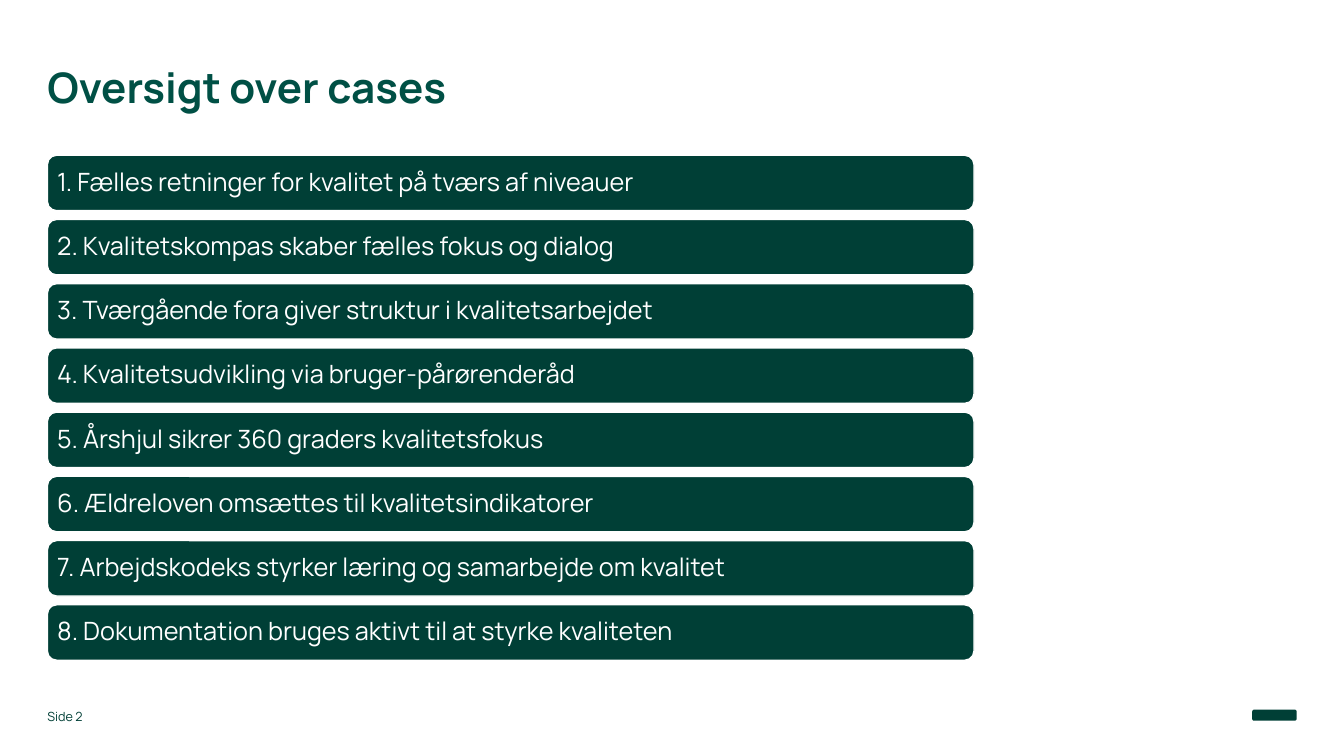
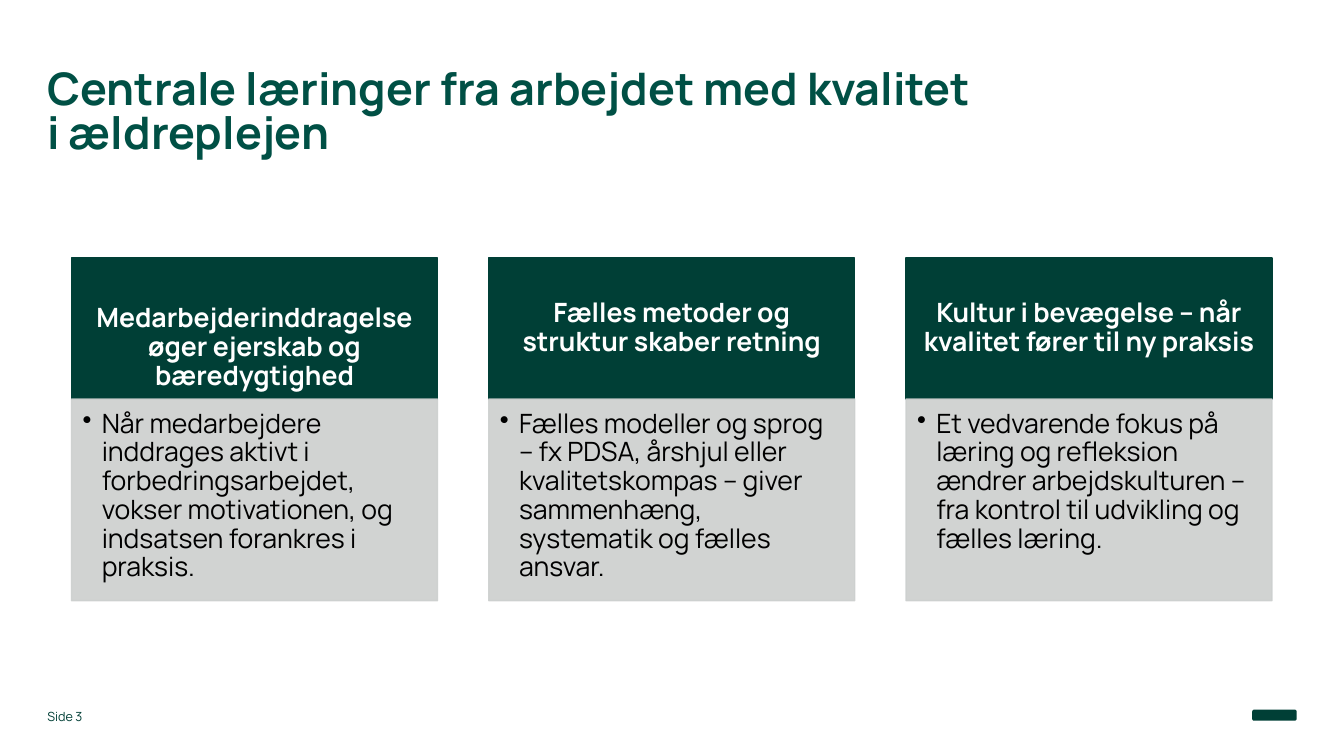
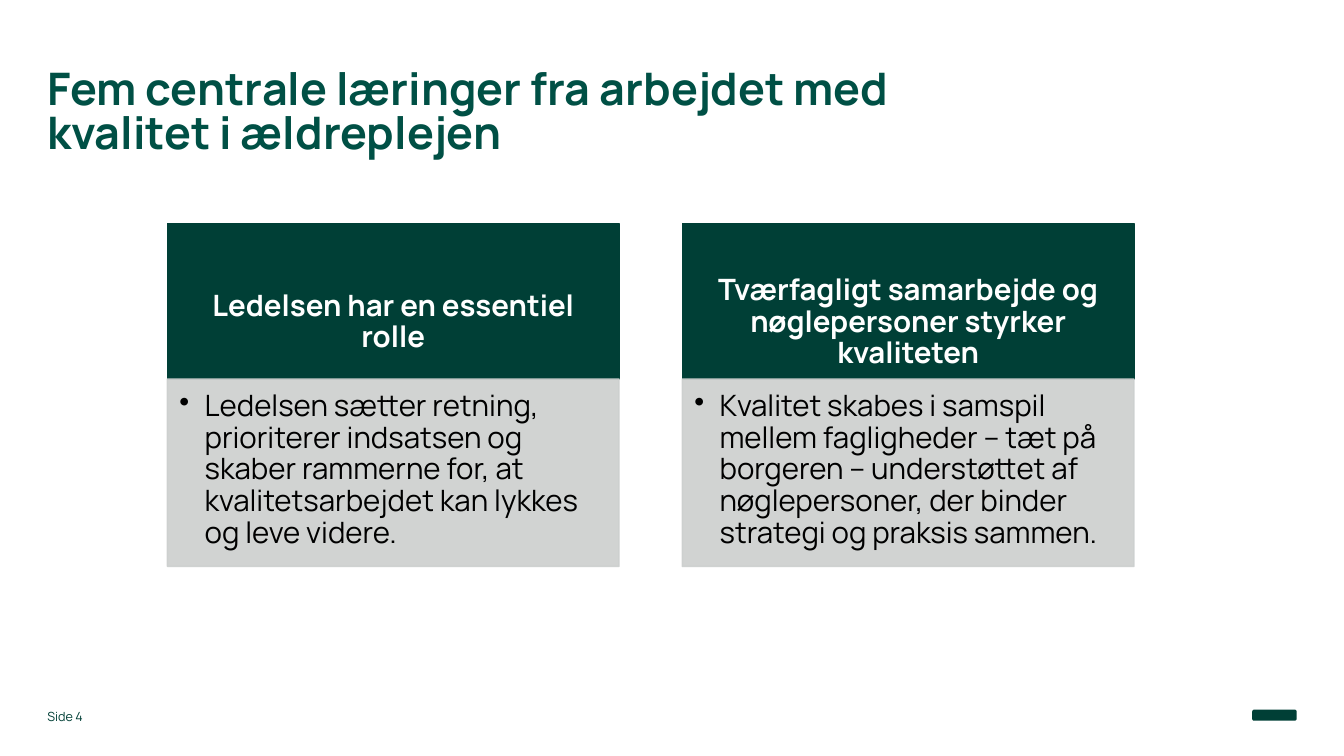
"""Builds three slides on quality cases and learnings in elderly care."""
from lxml import etree
from pptx import Presentation
from pptx import util as u
from pptx.dml.color import RGBColor
from pptx.enum import shapes, text
from pptx.oxml import ns

FONT = "Manrope"
GREEN, TITLE_GREEN, GREY, WHITE, BLACK = "003F36", "005045", "CCCFCE", "FFFFFF", "000000"
MARGIN, CONTENT_WIDTH = 0.47, 9.19
PANEL_PITCH = 1.14


def color(value):
    """Turn a hex string into a colour."""
    return RGBColor.from_string(value)


def box(*lengths):
    """Turn numbers into inches."""
    return [u.Inches(length) for length in lengths]


class Deck:
    """Holds the presentation, its style and the current slide."""

    def __init__(self):
        """Start an empty widescreen presentation."""
        self.prs = Presentation()
        self.prs.slide_width, self.prs.slide_height = box(13.33, 7.5)
        self.slide = None

    def set_text(self, frame, words, size, ink, bold=False, insets=(0, 0, 0, 0),
                 anchor=text.MSO_ANCHOR.TOP, align=text.PP_ALIGN.LEFT, spacing=0.9):
        """Fill a text frame with one formatted paragraph and return it."""
        frame.text = words
        frame.word_wrap = True
        frame.auto_size = text.MSO_AUTO_SIZE.NONE
        frame.vertical_anchor = anchor
        (frame.margin_left, frame.margin_top,
         frame.margin_right, frame.margin_bottom) = box(*insets)
        paragraph = frame.paragraphs[0]
        paragraph.alignment = align
        paragraph.line_spacing = spacing
        for run in paragraph.runs:
            run.font.name, run.font.size, run.font.bold = FONT, u.Pt(size), bold
            run.font.color.rgb = color(ink)
        return paragraph

    def shape(self, kind, place, fill, line, opacity=100):
        """Add a flat preset shape with a one-point outline."""
        shape = self.slide.shapes.add_shape(kind, *box(*place))
        shape.shadow.inherit = False
        shape.fill.solid()
        shape.fill.fore_color.rgb = color(fill)
        shape.line.color.rgb = color(line)
        shape.line.width = u.Pt(1)
        if opacity < 100:
            for tint in shape.element.iter(ns.qn("a:srgbClr")):
                etree.SubElement(tint, ns.qn("a:alpha"), val=str(opacity * 1000))
        return shape

    def new_slide(self, title, title_size=32):
        """Add a slide with its title, page number and corner mark."""
        self.slide = self.prs.slides.add_slide(self.prs.slide_layouts[5])
        heading = self.slide.shapes.title
        heading.left, heading.top, heading.width, heading.height = box(
            MARGIN, 0.69, CONTENT_WIDTH, 1.02)
        self.set_text(heading.text_frame, title, title_size, TITLE_GREEN, True, spacing=0.83)
        page = self.slide.shapes.add_textbox(*box(MARGIN, 6.98, 0.74, 0.2))
        self.set_text(page.text_frame, f"Side {len(self.prs.slides) + 1}", 9, GREEN,
                      anchor=text.MSO_ANCHOR.BOTTOM, spacing=1.0)
        mark = self.shape(shapes.MSO_SHAPE.ROUNDED_RECTANGLE,
                          (12.42, 7.04, 0.44, 0.11), GREEN, GREEN)
        mark.line.fill.background()

    def bars(self, cases, top, last_top):
        """Stack numbered bars at equal distances."""
        pitch = (last_top - top) / (len(cases) - 1)
        for index, case in enumerate(cases):
            bar = self.shape(shapes.MSO_SHAPE.ROUNDED_RECTANGLE,
                             (MARGIN, top + index * pitch, CONTENT_WIDTH, 0.55), GREEN, WHITE)
            self.set_text(bar.text_frame, f"{index + 1}. {case}", 18, WHITE,
                          insets=(0.07,) * 4, anchor=text.MSO_ANCHOR.MIDDLE)

    def bullet(self, paragraph, indent):
        """Give a paragraph a hanging bullet."""
        props = paragraph._p.get_or_add_pPr()
        props.set("marL", str(u.Inches(indent)))
        props.set("indent", str(-u.Inches(indent)))
        etree.SubElement(props, ns.qn("a:buChar"), char="•")

    def panels(self, learnings, left, top, width, head_height, body_height, size, pad, indent):
        """Set panels side by side, each a heading over a bulleted body."""
        for index, (heading, lowered, body) in enumerate(learnings):
            x = left + index * width * PANEL_PITCH
            head = self.shape(shapes.MSO_SHAPE.RECTANGLE,
                              (x, top, width, head_height), GREEN, GREEN)
            above, below = (0.02 * size, 0) if lowered else (0.08, 0.08)
            self.set_text(head.text_frame, heading, size, WHITE, True,
                          (pad + 0.04, above, pad + 0.04, below),
                          text.MSO_ANCHOR.MIDDLE, text.PP_ALIGN.CENTER)
            detail = self.shape(shapes.MSO_SHAPE.RECTANGLE,
                                (x, top + head_height, width, body_height), GREY, GREY, 90)
            point = self.set_text(detail.text_frame, body, size, BLACK,
                                  insets=(pad, pad, pad + 0.04, pad + 0.06))
            self.bullet(point, indent)


def main():
    """Build and save the slides."""
    deck = Deck()

    deck.new_slide("Oversigt over cases", 30)
    deck.bars([
        "Fælles retninger for kvalitet på tværs af niveauer",
        "Kvalitetskompas skaber fælles fokus og dialog",
        "Tværgående fora giver struktur i kvalitetsarbejdet",
        "Kvalitetsudvikling via bruger-pårørenderåd",
        "Årshjul sikrer 360 graders kvalitetsfokus",
        "Ældreloven omsættes til kvalitetsindikatorer",
        "Arbejdskodeks styrker læring og samarbejde om kvalitet",
        "Dokumentation bruges aktivt til at styrke kvaliteten",
    ], top=1.54, last_top=6)

    deck.new_slide("Centrale læringer fra arbejdet med kvalitet i ældreplejen")
    deck.panels([
        ("Medarbejderinddragelse øger ejerskab og bæredygtighed", True,
         "Når medarbejdere inddrages aktivt i forbedringsarbejdet, vokser motivationen, "
         "og indsatsen forankres i praksis."),
        ("Fælles metoder og struktur skaber retning", False,
         "Fælles modeller og sprog – fx PDSA, årshjul eller kvalitetskompas – giver "
         "sammenhæng, systematik og fælles ansvar."),
        ("Kultur i bevægelse – når kvalitet fører til ny praksis", False,
         "Et vedvarende fokus på læring og refleksion ændrer arbejdskulturen – fra "
         "kontrol til udvikling og fælles læring."),
    ], left=0.71, top=2.56, width=3.63, head_height=1.4, body_height=2,
        size=19, pad=0.11, indent=0.19)

    deck.new_slide("Fem centrale læringer fra arbejdet med kvalitet i ældreplejen")
    deck.panels([
        ("Ledelsen har en essentiel rolle", True,
         "Ledelsen sætter retning, prioriterer indsatsen og skaber rammerne for, at "
         "kvalitetsarbejdet kan lykkes og leve videre."),
        ("Tværfagligt samarbejde og nøglepersoner styrker kvaliteten", True,
         "Kvalitet skabes i samspil mellem fagligheder – tæt på borgeren – understøttet "
         "af nøglepersoner, der binder strategi og praksis sammen."),
    ], left=1.66, top=2.22, width=4.48, head_height=1.54, body_height=1.86,
        size=21, pad=0.12, indent=0.25)

    deck.prs.save("out.pptx")


if __name__ == "__main__":
    main()
